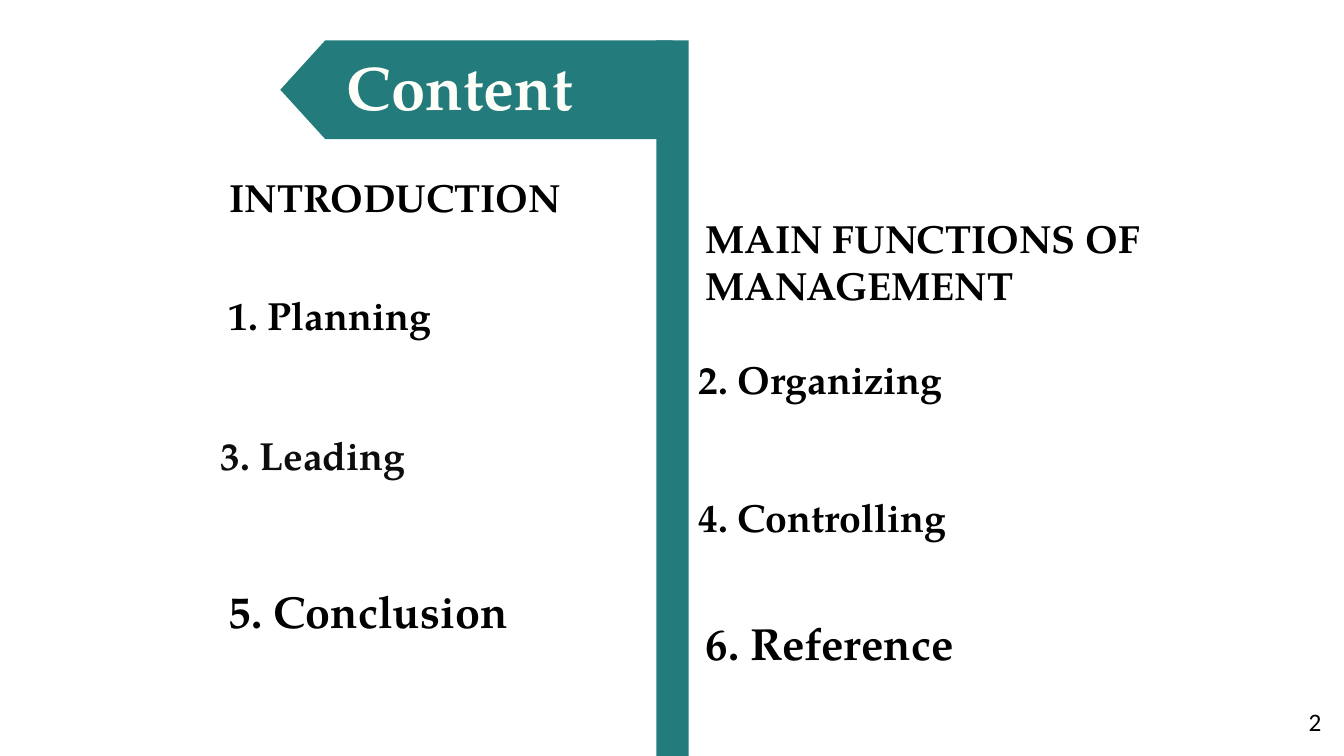
from dataclasses import dataclass

from pptx import Presentation
from pptx import util as u
from pptx.dml.color import RGBColor
from pptx.enum import shapes, text

PX = u.Inches(1) // 100  # one px is a hundredth of an inch


@dataclass(frozen=True)
class Theme:
    teal: str = "247B7B"
    ink: str = "000000"
    soft_ink: str = "0D0D0D"
    cream: str = "FFFFFA"
    serif: str = "TeX Gyre Pagella"
    sans: str = "Calibri"
    title: int = 44
    closing: int = 32
    entry: int = 28
    number: int = 18


THEME = Theme()


def place(part, box):
    part.left, part.top, part.width, part.height = (n * PX for n in box)


def write(part, words, size, color=THEME.ink, font=THEME.serif, bold=True):
    frame = part.text_frame
    frame.text = words
    frame.word_wrap = True
    frame.auto_size = text.MSO_AUTO_SIZE.NONE
    frame.vertical_anchor = text.MSO_ANCHOR.TOP
    line = frame.paragraphs[0]
    line.alignment = text.PP_ALIGN.LEFT
    face = line.runs[0].font
    face.name, face.size, face.bold = font, u.Pt(size), bold
    face.color.rgb = RGBColor.from_string(color)


def add_label(slide, box, words, size, **style):
    label = slide.shapes.add_textbox(0, 0, 0, 0)
    place(label, box)
    write(label, words, size, **style)


def add_block(slide, kind, box):
    block = slide.shapes.add_shape(kind, 0, 0, 0, 0)
    place(block, box)
    block.shadow.inherit = False
    block.fill.solid()
    block.fill.fore_color.rgb = RGBColor.from_string(THEME.teal)
    block.line.fill.background()
    return block


def signpost(slide, box):
    """Post along the right edge of the box, with the title arm pointing left."""
    left, top, width, height = box
    arm = add_block(slide, shapes.MSO_SHAPE.PENTAGON, (left, top, width - 16, 98))
    arm.adjustments[0] = 0.455
    arm.rotation = 180
    add_block(slide, shapes.MSO_SHAPE.RECTANGLE, (left + width - 32, top, 32, height))

    # The title is raised above the arm
    title = slide.shapes.title
    slide.shapes._spTree.append(title._element)
    place(title, (left + 56, top + 4, 276, 84))
    write(title, "Content", THEME.title, THEME.cream)


def left_column(slide, box):
    left, top, width, _ = box
    entries = [
        (9, 0, "INTRODUCTION", THEME.entry, THEME.ink),
        (8, 117, "1. Planning", THEME.entry, THEME.ink),
        (0, 256, "3. Leading", THEME.entry, THEME.soft_ink),
        (8, 407, "5. Conclusion", THEME.closing, THEME.ink),
    ]
    for indent, drop, words, size, color in entries:
        add_label(slide, (left + indent, top + drop, width, 2 * size + 1),
                  words, size, color=color)


def right_column(slide, box):
    left, top, width, _ = box
    add_label(slide, (left + 7, top, 661, 104), "MAIN FUNCTIONS OF MANAGEMENT", THEME.entry)
    entries = [
        (0, 140, "2. Organizing", THEME.entry),
        (0, 276, "4. Controlling", THEME.entry),
        (7, 398, "6. Reference", THEME.closing),
    ]
    for indent, drop, words, size in entries:
        add_label(slide, (left + indent, top + drop, width, 2 * size + 1), words, size)


def page_number(slide, box):
    add_label(slide, box, "2", THEME.number, font=THEME.sans, bold=False)


def main():
    deck = Presentation()
    deck.slide_width, deck.slide_height = 1333 * PX, 750 * PX
    slide = deck.slides.add_slide(deck.slide_layouts[5])
    signpost(slide, (278, 40, 405, 710))
    left_column(slide, (209, 167, 426, 471))
    right_column(slide, (683, 208, 519, 462))
    page_number(slide, (1288, 696, 62, 40))
    deck.save("out.pptx")


if __name__ == "__main__":
    main()
